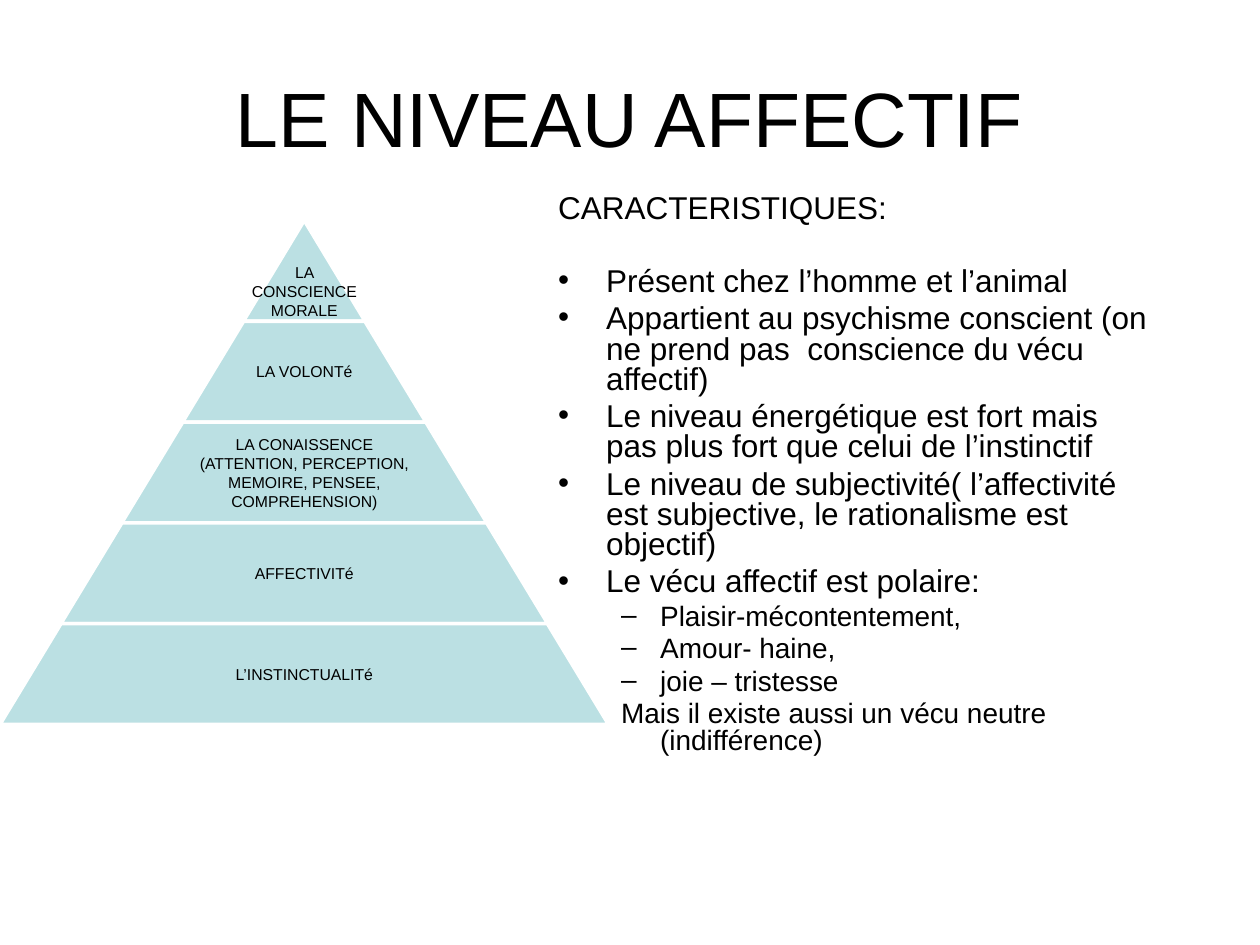
from lxml import etree
from pptx import Presentation
from pptx.dml.color import RGBColor
from pptx.enum.shapes import MSO_SHAPE
from pptx.enum.text import MSO_ANCHOR, MSO_AUTO_SIZE, PP_ALIGN
from pptx.oxml.ns import qn
from pptx.util import Inches, Pt

BLACK = RGBColor(0x00, 0x00, 0x00)
WHITE = RGBColor(0xFF, 0xFF, 0xFF)
PALE_TEAL = RGBColor(0xBB, 0xE0, 0xE3)
TRAPEZOID = MSO_SHAPE.TRAPEZOID
MIDDLE, BOTTOM = MSO_ANCHOR.MIDDLE, MSO_ANCHOR.BOTTOM
NO_AUTOFIT = MSO_AUTO_SIZE.NONE
CENTER = PP_ALIGN.CENTER


def style_font(para, size):
    for span in para.runs:
        span.font.name = "Arial"
        span.font.size = Pt(size)
        span.font.color.rgb = BLACK


def set_bullet(para, bullet, margin, hanging):
    """Give the paragraph a hanging indent, with a bullet or with none."""
    properties = para._p.get_or_add_pPr()
    properties.set("marL", str(Inches(margin)))
    properties.set("indent", str(-Inches(hanging)))
    if bullet:
        etree.SubElement(properties, qn("a:buChar")).set("char", bullet)
    else:
        etree.SubElement(properties, qn("a:buNone"))


deck = Presentation()
deck.slide_width, deck.slide_height = Inches(10), Inches(7.5)
page = deck.slides.add_slide(deck.slide_layouts[1])

# Title
title = page.shapes.title
title.left, title.top = Inches(0.5), Inches(0.3)
title.width, title.height = Inches(9), Inches(1.25)
title.text_frame.text = "LE NIVEAU AFFECTIF"
title.text_frame.vertical_anchor = MIDDLE
title.text_frame.auto_size = NO_AUTOFIT
title.text_frame.paragraphs[0].alignment = CENTER
style_font(title.text_frame.paragraphs[0], 44)

# Characteristics: level, bullet, space before in points, text
characteristics = [
    (0, None, 0, "CARACTERISTIQUES:"),
    (0, "•", 24.5, "Présent chez l’homme et l’animal"),
    (0, "•", 4, "Appartient au psychisme conscient (on ne prend pas  conscience du vécu affectif)"),
    (0, "•", 4, "Le niveau énergétique est fort mais pas plus fort que celui de l’instinctif"),
    (0, "•", 4, "Le niveau de subjectivité( l’affectivité est subjective, le rationalisme est objectif)"),
    (0, "•", 4, "Le vécu affectif est polaire:"),
    (1, "–", 3.2, "Plaisir-mécontentement,"),
    (1, "–", 3.2, "Amour- haine,"),
    (1, "–", 3.2, "joie – tristesse"),
    (1, None, 3.2, "Mais il existe aussi un vécu neutre (indifférence)"),
]
level_styles = [(0.38, 0.38, 18), (0.81, 0.31, 16)]  # margin, hanging, size

body = page.placeholders[1]
body.left, body.top = Inches(4.33), Inches(1.5)
body.width, body.height = Inches(4.92), Inches(4.95)
body.text_frame.text = "\n".join(text for *_, text in characteristics)
body.text_frame.auto_size = NO_AUTOFIT
for para, (level, bullet, gap, _) in zip(body.text_frame.paragraphs, characteristics):
    margin, hanging, size = level_styles[level]
    para.level = level
    para.line_spacing = 0.8
    para.space_before = Pt(gap)
    set_bullet(para, bullet, margin, hanging)
    style_font(para, size)

# Pyramid, from the top down: text, share of the level width, anchor
pyramid_levels = [
    ("LA CONSCIENCE MORALE", 1, BOTTOM),
    ("LA VOLONTé", 0.65, MIDDLE),
    ("LA CONAISSENCE (ATTENTION, PERCEPTION,\nMEMOIRE, PENSEE, COMPREHENSION)", 0.65, MIDDLE),
    ("AFFECTIVITé", 0.65, MIDDLE),
    ("L’INSTINCTUALITé", 0.65, MIDDLE),
]
base_width, pyramid_top, level_height = 4.83, 1.75, 0.8
center = base_width / 2

for number, (text, share, anchor) in enumerate(pyramid_levels):
    width = base_width * (number + 1) / len(pyramid_levels)
    top = Inches(pyramid_top + number * level_height)
    band = page.shapes.add_shape(
        TRAPEZOID, Inches(center - width / 2), top, Inches(width), Inches(level_height))
    band.adjustments[0] = 0.606
    band.shadow.inherit = False
    band.fill.solid()
    band.fill.fore_color.rgb = PALE_TEAL
    band.line.color.rgb = WHITE
    band.line.width = Pt(2)

    label_width = width * share
    label = page.shapes.add_textbox(
        Inches(center - label_width / 2), top, Inches(label_width), Inches(level_height))
    frame = label.text_frame
    frame.word_wrap = True
    frame.vertical_anchor = anchor
    frame.margin_left = frame.margin_right = Inches(0.01)
    frame.margin_top = frame.margin_bottom = Inches(0.01)
    frame.text = text
    for para in frame.paragraphs:
        para.alignment = CENTER
        style_font(para, 9)

deck.save("out.pptx")
